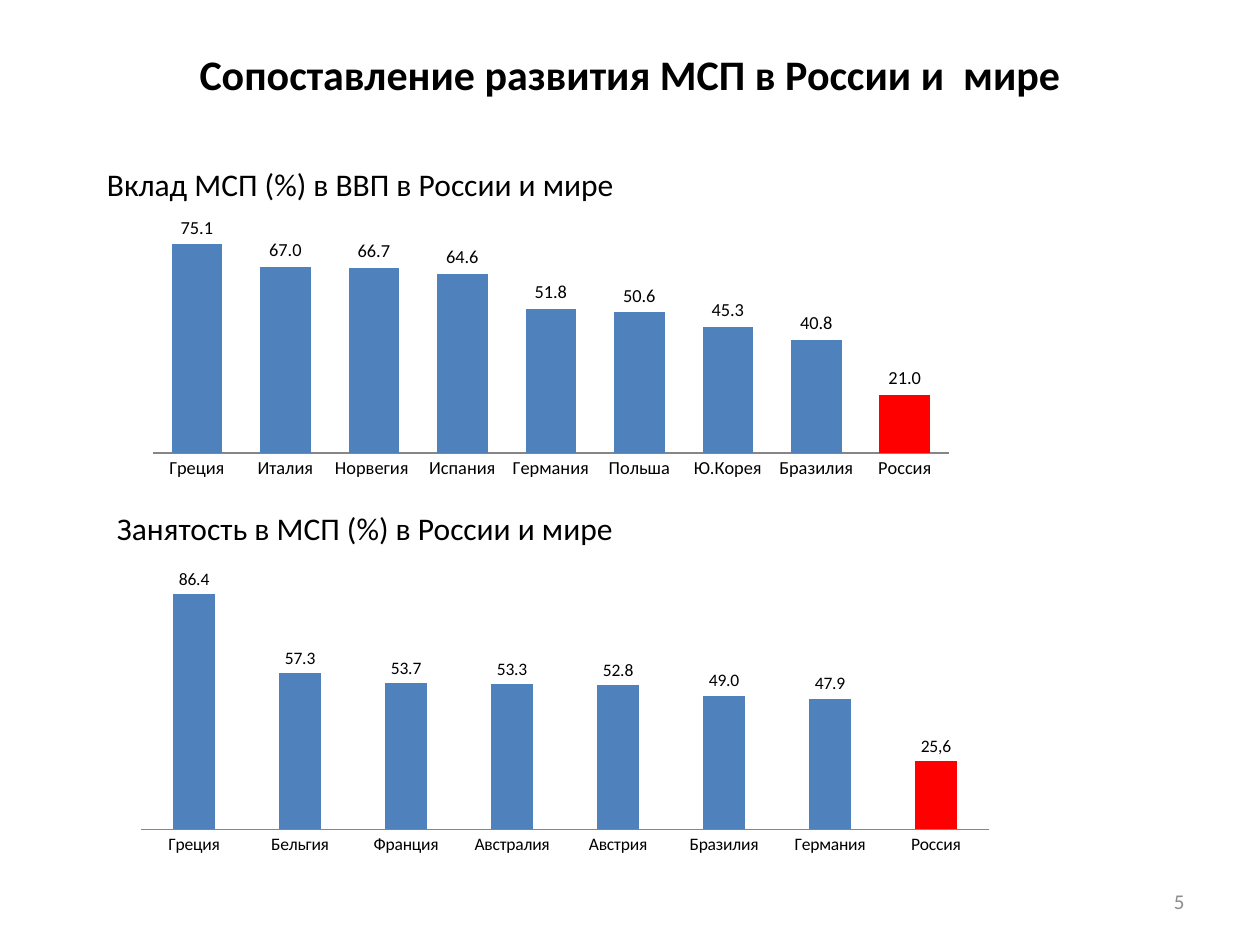
from lxml import etree
from pptx import Presentation
from pptx import util as u
from pptx.chart import data as chart_data
from pptx.dml import color
from pptx.enum import chart as ec
from pptx.enum import text
from pptx.oxml import ns

Pt = u.Pt
FONT = "Calibri"
COLORS = {"ink": "000000", "number": "8C8C8C", "bar": "4F81BD",
          "russia": "FF0000", "axis": "868686"}


def rgb(name):
    return color.RGBColor.from_string(COLORS[name])


def add_text(words, left, top, width, height, size=18, ink="ink", bold=False,
             align=text.PP_ALIGN.LEFT, anchor=text.MSO_ANCHOR.TOP, wrap=True):
    frame = slide.shapes.add_textbox(Pt(left), Pt(top), Pt(width), Pt(height)).text_frame
    frame.word_wrap = wrap
    frame.vertical_anchor = anchor
    line = frame.paragraphs[0]
    line.alignment = align
    run = line.add_run()
    run.text = words
    run.font.name = FONT
    run.font.size = Pt(size)
    run.font.bold = bold
    run.font.color.rgb = rgb(ink)


deck = Presentation()
deck.slide_width, deck.slide_height = Pt(720), Pt(540)
slide = deck.slides.add_slide(deck.slide_layouts[6])

# Title, chart headings and page number
add_text("Сопоставление развития МСП в России и  мире", 36, 12.24, 648, 59.76,
         size=24, bold=True, align=text.PP_ALIGN.CENTER, anchor=text.MSO_ANCHOR.MIDDLE)
add_text("Вклад МСП (%) в ВВП в России и мире", 54, 90.72, 442, 29)
add_text("Занятость в МСП (%) в России и мире", 59.76, 287.28, 335.5, 29, wrap=False)
add_text("5", 516.24, 500.4, 167.76, 28.8, size=12, ink="number",
         align=text.PP_ALIGN.RIGHT, anchor=text.MSO_ANCHOR.MIDDLE)

# Both comparisons: Russia is always the last, highlighted column
comparisons = [
    {"place": (57.6, 120.24, 494.64, 167.04), "size": 10.5, "gap": 75, "overlap": 0,
     "top": 80, "plot": (0.06, 0.07, 0.92, 0.76), "russia_label": None,
     "shares": {"Греция": 75.1, "Италия": 67, "Норвегия ": 66.7, "Испания": 64.6,
                "Германия": 51.8, "Польша": 50.6, "Ю.Корея": 45.3,
                "Бразилия": 40.8, "Россия": 21}},
    {"place": (70.56, 314.64, 504.72, 177.12), "size": 10, "gap": 150, "overlap": -25,
     "top": 100, "plot": (0.02, 0.02, 0.96, 0.88), "russia_label": "25,6",
     "shares": {"Греция": 86.4, "Бельгия": 57.3, "Франция": 53.7, "Австралия": 53.3,
                "Австрия": 52.8, "Бразилия": 49, "Германия": 47.9, "Россия": 25}},
]

for item in comparisons:
    shares = chart_data.CategoryChartData(number_format="0.0")
    shares.categories = list(item["shares"])
    shares.add_series("Series 1", list(item["shares"].values()))
    chart = slide.shapes.add_chart(ec.XL_CHART_TYPE.COLUMN_CLUSTERED,
                                   *[Pt(side) for side in item["place"]], shares).chart
    chart.has_title = False
    chart.has_legend = False
    chart.font.name = FONT
    chart.font.size = Pt(item["size"])
    chart.font.color.rgb = rgb("ink")

    # Axes
    countries, percent = chart.category_axis, chart.value_axis
    countries.major_tick_mark = ec.XL_TICK_MARK.NONE
    countries.format.line.color.rgb = rgb("axis")
    countries.format.line.width = Pt(0.75)
    percent.minimum_scale, percent.maximum_scale = 0, item["top"]
    percent.has_major_gridlines = False
    percent.visible = False

    # Columns
    plot = chart.plots[0]
    plot.vary_by_categories = False
    plot.gap_width, plot.overlap = item["gap"], item["overlap"]
    columns = plot.series[0]
    columns.format.fill.solid()
    columns.format.fill.fore_color.rgb = rgb("bar")
    russia = columns.points[len(item["shares"]) - 1]
    russia.format.fill.solid()
    russia.format.fill.fore_color.rgb = rgb("russia")

    # Value labels
    labels = columns.data_labels
    labels.show_value = True
    labels.number_format, labels.number_format_is_linked = "0.0", False
    labels.position = ec.XL_LABEL_POSITION.OUTSIDE_END
    if item["russia_label"]:
        russia.data_label.position = ec.XL_LABEL_POSITION.OUTSIDE_END
        run = russia.data_label.text_frame.paragraphs[0].add_run()
        run.text = item["russia_label"]
        run.font.name = FONT
        run.font.size = Pt(item["size"])
        run.font.color.rgb = rgb("ink")

    # Fixed inner plot area
    area = chart.element.find(".//" + ns.qn("c:plotArea"))
    for old in area.findall(ns.qn("c:layout")):
        area.remove(old)
    layout = etree.Element(ns.qn("c:layout"))
    area.insert(0, layout)
    manual = etree.SubElement(layout, ns.qn("c:manualLayout"))
    settings = [("layoutTarget", "inner"), ("xMode", "edge"), ("yMode", "edge"),
                *zip("xywh", item["plot"])]
    for tag, value in settings:
        etree.SubElement(manual, ns.qn("c:" + tag)).set("val", str(value))

deck.save("out.pptx")
